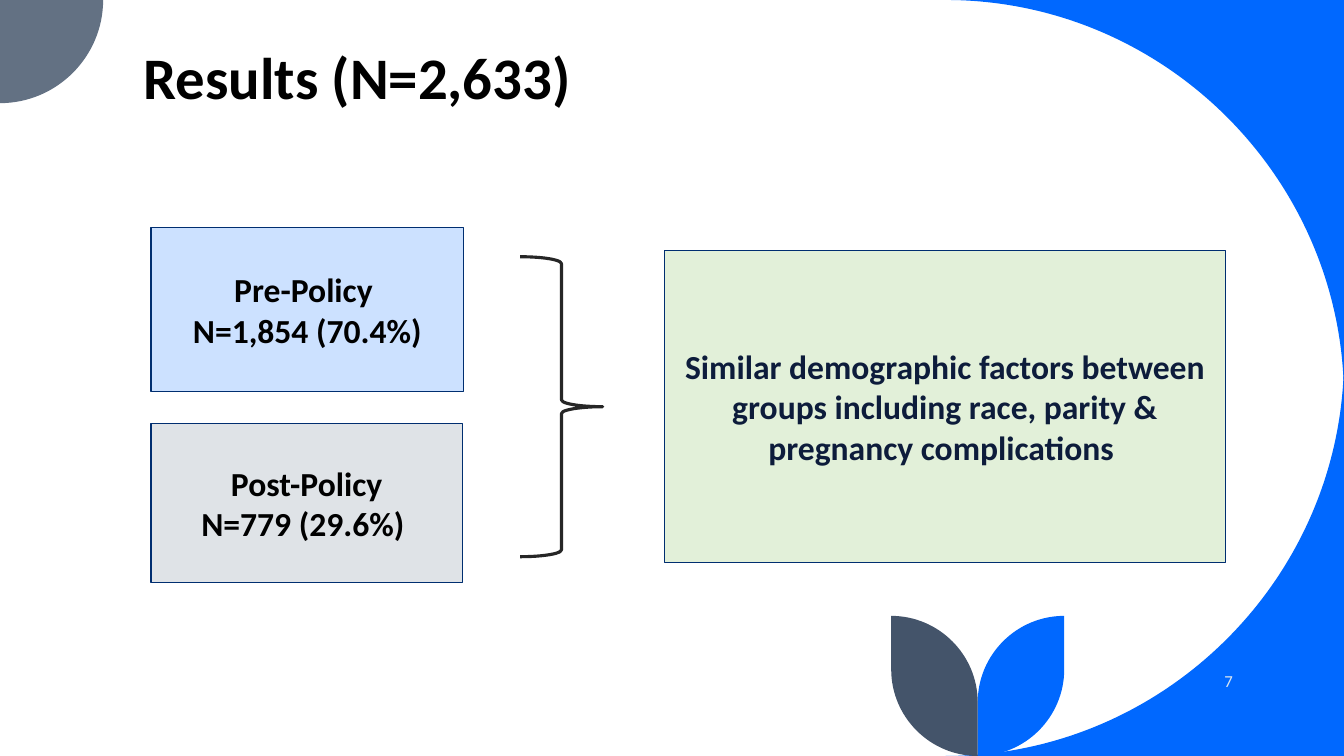
from pptx import Presentation
from pptx.dml.color import RGBColor
from pptx.enum.shapes import MSO_SHAPE
from pptx.enum.text import MSO_ANCHOR, PP_ALIGN
from pptx.oxml.ns import qn
from pptx.util import Cm, Pt

W, H = 33.87, 19.05
ROUND = 0.55  # handle length of a quarter circle
COLORS = {
    "blue": "0068FF", "slate": "637183", "dark_slate": "44546A",
    "pale_blue": "CCE1FF", "pale_gray": "DFE3E7", "pale_green": "E2F0D9",
    "border": "002E70", "brace": "262626",
    "black": "000000", "navy": "0D1C3B", "number": "DAE5EF",
}


def color(name):
    return RGBColor.from_string(COLORS[name])


def write(tf, text, size=24, fill="black", bold=True, align=PP_ALIGN.CENTER,
          anchor=MSO_ANCHOR.MIDDLE, spacing=None):
    tf.word_wrap = True
    tf.vertical_anchor = anchor
    for i, line in enumerate(text.split("\n")):
        p = tf.paragraphs[0] if i == 0 else tf.add_paragraph()
        p.alignment = align
        p.line_spacing = spacing
        r = p.add_run()
        r.text = line
        r.font.name = "Calibri"
        r.font.size = Pt(size)
        r.font.bold = bold
        r.font.color.rgb = color(fill)


def toward(start, corner):
    return tuple(a + (b - a) * ROUND for a, b in zip(start, corner))


class Deck:
    def __init__(self, prs):
        self.s = prs.slides.add_slide(prs.slide_layouts[6])

    def outline(self, fill, start, *steps):
        """Each step is (end,) for a line or (corner, end) for a quarter circle."""
        points, curves = [start], []
        for *corner, end in steps:
            if corner:
                curves.append(len(points) - 1)
                points += [toward(points[-1], corner[0]), toward(end, corner[0])]
            points.append(end)
        pts = [(Cm(x), Cm(y)) for x, y in points]
        fb = self.s.shapes.build_freeform(*pts[0])
        fb.add_line_segments(pts[1:], close=True)
        sp = fb.convert_to_shape()
        # Merge the three segments of each quarter circle into one curve
        lines = list(sp._element.iter(qn("a:lnTo")))
        for i in curves:
            lines[i].tag = qn("a:cubicBezTo")
            for extra in lines[i + 1:i + 3]:
                lines[i].append(extra[0])
                extra.getparent().remove(extra)
        sp.shadow.inherit = False
        sp.fill.solid()
        sp.fill.fore_color.rgb = color(fill)
        sp.line.fill.background()

    def text(self, x, y, w, h, text, **fmt):
        sp = self.s.shapes.add_textbox(Cm(x), Cm(y), Cm(w), Cm(h))
        write(sp.text_frame, text, **fmt)

    def shape(self, kind, x, y, w, h, line, line_width):
        sp = self.s.shapes.add_shape(kind, Cm(x), Cm(y), Cm(w), Cm(h))
        sp.shadow.inherit = False
        sp.fill.background()
        sp.line.color.rgb = color(line)
        sp.line.width = Pt(line_width)
        return sp

    def box(self, x, y, w, h, text, back, **fmt):
        sp = self.shape(MSO_SHAPE.RECTANGLE, x, y, w, h, "border", 1)
        sp.fill.solid()
        sp.fill.fore_color.rgb = color(back)
        write(sp.text_frame, text, **fmt)


def main():
    prs = Presentation()
    prs.slide_width, prs.slide_height = Cm(W), Cm(H)
    deck = Deck(prs)

    # Corner decorations
    R, r = 10.04, 2.6
    for edge, inner in ((0, R), (H, H - R)):
        deck.outline("blue", (W - R, edge), ((W, edge), (W, inner)), ((W, edge),))
    deck.outline("slate", (r, 0), ((r, r), (0, r)), ((0, 0),))

    # Pair of leaves, mirrored about the stem
    stem, leaf, top = 24.64, 2.18, 15.52
    for side, fill in ((1, "blue"), (-1, "dark_slate")):
        tip = stem + side * leaf
        deck.outline(fill, (tip, top), ((tip, H - leaf),),
                     ((tip, H), (stem, H)),
                     ((stem, top + leaf),),
                     ((stem, top), (tip, top)))

    # Title and slide number
    deck.text(3.37, 0.76, 28.78, 2.16, "Results (N=2,633)", size=42,
              align=PP_ALIGN.LEFT, anchor=MSO_ANCHOR.BOTTOM, spacing=0.8)
    deck.text(26.72, 16.64, 4.6, 1.02, "7", size=12, fill="number",
              bold=False, align=PP_ALIGN.RIGHT)

    # Groups joined by a brace to the finding
    deck.box(3.81, 5.74, 7.87, 4.13, "Pre-Policy \nN=1,854 (70.4%)", "pale_blue")
    deck.box(3.81, 10.67, 7.84, 4.01, "Post-Policy\nN=779 (29.6%) ", "pale_gray")
    deck.shape(MSO_SHAPE.RIGHT_BRACE, 13.11, 6.47, 2.08, 7.56, "brace", 2.25)
    deck.box(16.75, 6.31, 14.13, 7.87,
             "Similar demographic factors between groups including race, "
             "parity & pregnancy complications ", "pale_green", fill="navy")

    prs.save("out.pptx")


if __name__ == "__main__":
    main()
